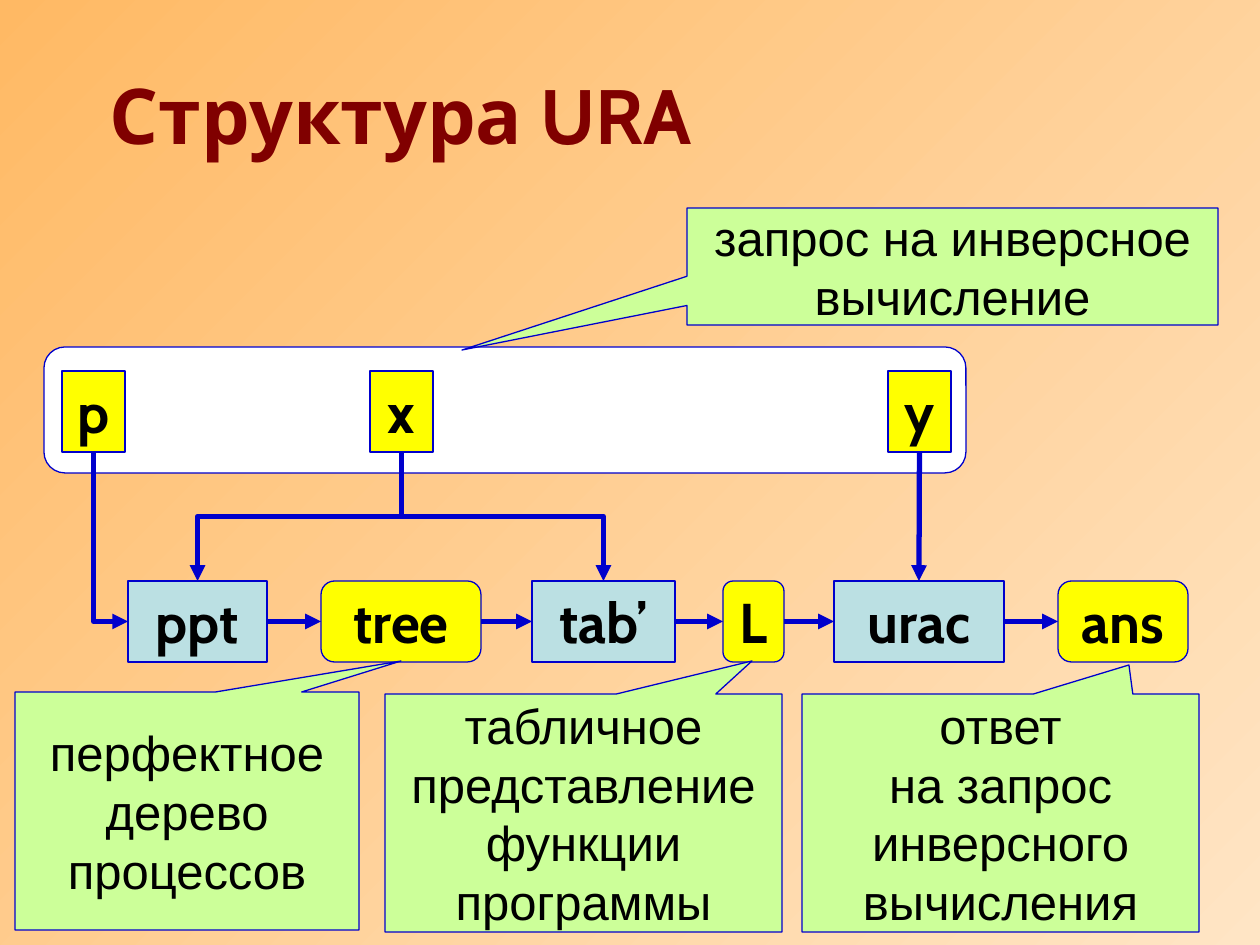
from itertools import pairwise

from lxml import etree
from pptx import Presentation
from pptx import util as u
from pptx.dml.color import RGBColor
from pptx.enum import shapes, text
from pptx.oxml import parse_xml
from pptx.oxml.ns import nsdecls, qn

COLORS = {
    "bg_start": "FFB964", "bg_end": "FFE5C5", "title": "800000",
    "shadow": "808080", "line": "0000CC", "text": "000000",
    "panel": "FFFFFF", "data": "FFFF00", "step": "BBE0E3", "note": "CCFF99",
}
SHAPE = shapes.MSO_SHAPE
TOP, LEFT, BOTTOM, RIGHT = range(4)


def px(n):
    return u.Emu(round(n * 914400 / 126))


def color(name):
    return RGBColor.from_string(COLORS[name])


def add_background(slide):
    fill = slide.background.fill
    fill.gradient()
    fill.gradient_angle = 315
    for stop, name in zip(fill.gradient_stops, ("bg_start", "bg_end")):
        stop.color.rgb = color(name)


def add_title(slide, box, words):
    sp = slide.shapes.title
    sp.left, sp.top, sp.width, sp.height = map(px, box)
    tf = sp.text_frame
    tf.text = words
    tf.auto_size = text.MSO_AUTO_SIZE.NONE
    tf.vertical_anchor = text.MSO_ANCHOR.MIDDLE
    p = tf.paragraphs[0]
    p.alignment = text.PP_ALIGN.LEFT
    font = p.runs[0].font
    font.name, font.size, font.bold = "Cabin", u.Pt(44), True
    font.color.rgb = color("title")
    shadow = parse_xml(
        f'<a:effectLst {nsdecls("a")}><a:outerShdw dist="35921" dir="2700000">'
        f'<a:srgbClr val="{COLORS["shadow"]}"/></a:outerShdw></a:effectLst>')
    p.runs[0]._r.rPr.find(qn("a:solidFill")).addnext(shadow)


def add_box(slide, kind, box, fill, words="", font="Cabin", size=32, bold=True, wrap=False):
    sp = slide.shapes.add_shape(kind, *map(px, box))
    sp.shadow.inherit = False
    sp.fill.solid()
    sp.fill.fore_color.rgb = color(fill)
    sp.line.color.rgb = color("line")
    sp.line.width = u.Pt(0.75)
    tf = sp.text_frame
    tf.word_wrap = wrap
    tf.vertical_anchor = text.MSO_ANCHOR.MIDDLE
    if words:
        tf.text = words
    for p in tf.paragraphs:
        p.alignment = text.PP_ALIGN.CENTER
        p.font.name, p.font.size, p.font.bold = font, u.Pt(size), bold
        p.font.color.rgb = color("text")
    return sp


def add_callout(slide, box, tip, words):
    """Note whose pointer ends at tip, a point on the slide."""
    sp = add_box(slide, SHAPE.RECTANGULAR_CALLOUT, box, "note", words, "Arial", 28, False, True)
    x, y, w, h = box
    sp.adjustments[0] = (tip[0] - x) / w - 0.5
    sp.adjustments[1] = (tip[1] - y) / h - 0.5


def add_arrow(slide, start, start_side, end, end_side, kind=shapes.MSO_CONNECTOR.STRAIGHT):
    c = slide.shapes.add_connector(kind, 0, 0, 0, 0)
    c.begin_connect(start, start_side)
    c.end_connect(end, end_side)
    c.line.color.rgb = color("line")
    c.line.width = u.Pt(3)
    etree.SubElement(c.line._get_or_add_ln(), qn("a:tailEnd"), type="triangle")
    etree.SubElement(c._element.spPr, qn("a:effectLst"))
    return c


def add_elbow(slide, start, end, end_side):
    """Arrow that leaves the bottom of start and goes down first."""
    c = add_arrow(slide, start, BOTTOM, end, end_side, shapes.MSO_CONNECTOR.ELBOW)
    x1, y1, x2, y2 = c.begin_x, c.begin_y, c.end_x, c.end_y
    w, h = abs(y2 - y1), abs(x2 - x1)
    c.left, c.top = u.Emu((x1 + x2 - w) // 2), u.Emu((y1 + y2 - h) // 2)
    c.width, c.height = u.Emu(w), u.Emu(h)
    xfrm = c._element.spPr.find(qn("a:xfrm"))
    rightward = x2 > x1
    xfrm.set("rot", "16200000" if rightward else "5400000")
    xfrm.set("flipH", "1" if rightward else "0")
    xfrm.set("flipV", "0")
    if end_side == LEFT:
        c._element.spPr.find(qn("a:prstGeom")).set("prst", "bentConnector2")


def add_query(slide, box):
    """Panel with the inputs p, x and y; returns their boxes."""
    add_box(slide, SHAPE.FLOWCHART_ALTERNATE_PROCESS, box, "panel")
    x, y = box[:2]
    return [add_box(slide, SHAPE.RECTANGLE, (x + dx, y + 24, 63, 81), "data", name)
            for dx, name in ((18, "p"), (326, "x"), (844, "y"))]


def add_pipeline(slide, box):
    """Row of steps and their results, joined by arrows; returns the boxes."""
    x, y, _, h = box
    row = []
    for i, (dx, w, name) in enumerate((
            (0, 139, "ppt"), (193, 160, "tree"), (404, 143, "tab’"),
            (595, 61, "L"), (706, 170, "urac"), (930, 130, "ans"))):
        kind, fill = ((SHAPE.FLOWCHART_ALTERNATE_PROCESS, "data") if i % 2
                      else (SHAPE.RECTANGLE, "step"))
        row.append(add_box(slide, kind, (x + dx, y, w, h), fill, name))
    for a, b in pairwise(row):
        add_arrow(slide, a, RIGHT, b, LEFT)
    return row


def add_notes(slide):
    for box, tip, words in (
            ((687, 208, 531, 117), (462, 350), "запрос на инверсное вычисление"),
            ((15, 692, 344, 238), (401, 661), "перфектное дерево процессов"),
            ((385, 694, 397, 238), (752, 661), "табличное представление функции программы"),
            ((802, 694, 397, 238), (1129, 665), "ответ\nна запрос инверсного вычисления")):
        add_callout(slide, box, tip, words)


def main():
    prs = Presentation()
    prs.slide_width, prs.slide_height = px(1260), px(945)
    slide = prs.slides.add_slide(prs.slide_layouts[5])
    add_background(slide)
    add_title(slide, (97, 35, 1149, 158), "Структура URA")
    program, known, result = add_query(slide, (44, 347, 922, 126))
    ppt, _, tab, _, urac, _ = add_pipeline(slide, (128, 581, 1060, 81))
    add_elbow(slide, program, ppt, LEFT)
    add_elbow(slide, known, ppt, TOP)
    add_elbow(slide, known, tab, TOP)
    add_arrow(slide, result, BOTTOM, urac, TOP)
    add_notes(slide)
    prs.save("out.pptx")


if __name__ == "__main__":
    main()
